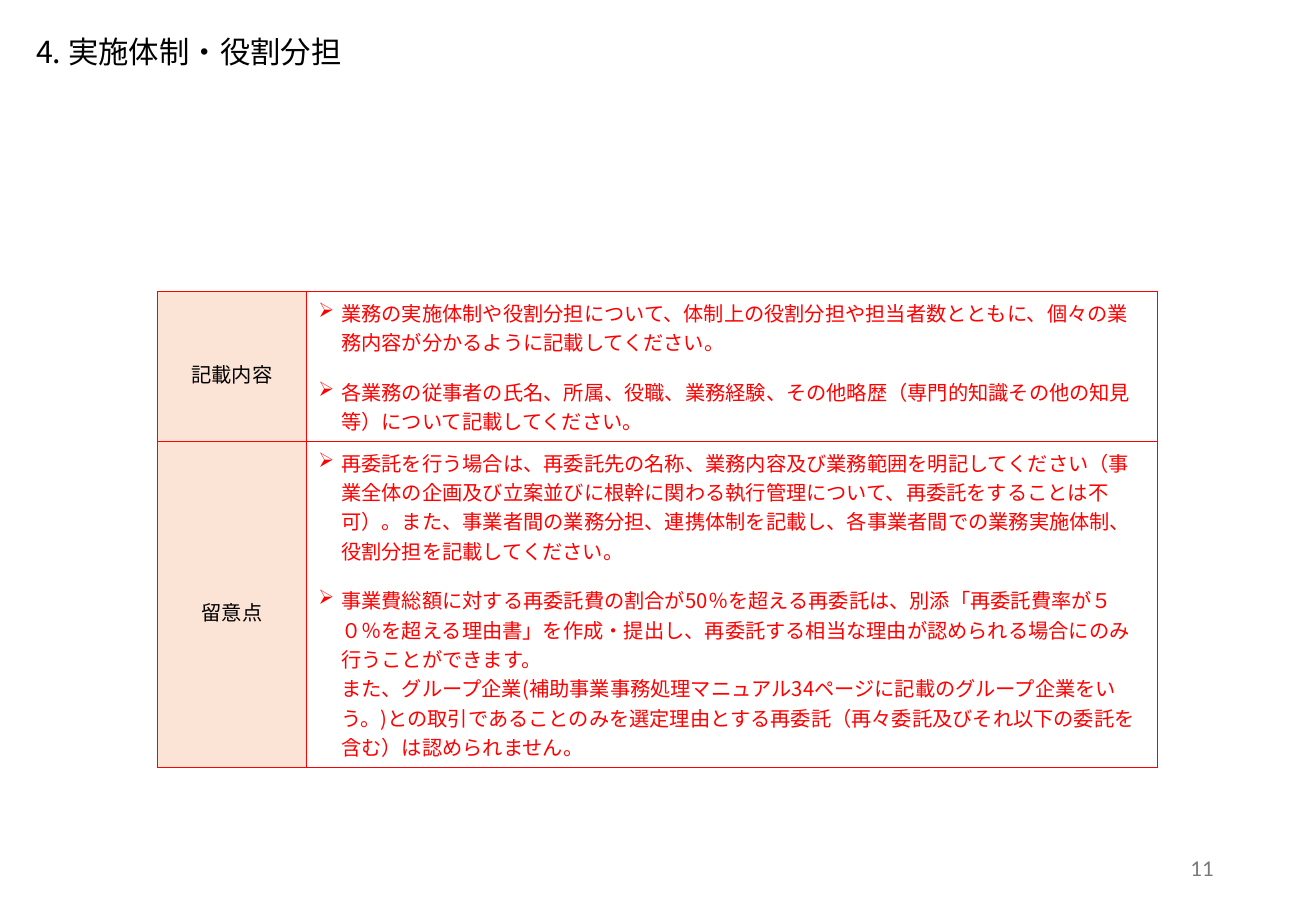
from dataclasses import dataclass

import pptx
import pptx.dml.color
import pptx.enum.lang
import pptx.enum.text
import pptx.oxml
import pptx.oxml.ns
import pptx.util
from pptx.util import Cm, Pt

ALIGN = pptx.enum.text.PP_ALIGN
ANCHOR = pptx.enum.text.MSO_ANCHOR


@dataclass(frozen=True)
class Theme:
    japanese: str = "Noto Sans CJK JP"
    latin: str = "Lato"
    black: str = "000000"
    red: str = "FF0000"
    grey: str = "797979"
    label_fill: str = "FBE3D6"
    white: str = "FFFFFF"
    title_size: int = 18
    body_size: int = 12
    border_width: float = 0.5


THEME = Theme()

GUIDANCE = [
    ("記載内容", [
        "業務の実施体制や役割分担について、体制上の役割分担や担当者数とともに、"
        "個々の業務内容が分かるように記載してください。",
        "各業務の従事者の氏名、所属、役職、業務経験、その他略歴"
        "（専門的知識その他の知見等）について記載してください。",
    ]),
    ("留意点", [
        "再委託を行う場合は、再委託先の名称、業務内容及び業務範囲を明記してください"
        "（事業全体の企画及び立案並びに根幹に関わる執行管理について、再委託をすることは不可）。"
        "また、事業者間の業務分担、連携体制を記載し、各事業者間での業務実施体制、"
        "役割分担を記載してください。",
        "事業費総額に対する再委託費の割合が50％を超える再委託は、"
        "別添「再委託費率が５０％を超える理由書」を作成・提出し、"
        "再委託する相当な理由が認められる場合にのみ行うことができます。\v"
        "また、グループ企業(補助事業事務処理マニュアル34ページに記載のグループ企業をいう。)"
        "との取引であることのみを選定理由とする再委託"
        "（再々委託及びそれ以下の委託を含む）は認められません。",
    ]),
]
COLUMN_WIDTHS = (Cm(3.1), Cm(17.8))
ROW_HEIGHTS = (Cm(3.1), Cm(6.82))


def xml(markup):
    namespace = pptx.oxml.ns.nsdecls("a")
    return pptx.oxml.parse_xml(markup.replace(" ", f" {namespace} ", 1))


def rgb(color):
    return pptx.dml.color.RGBColor.from_string(color)


def format_runs(paragraph, size, color, typeface):
    for run in paragraph.runs:
        run.font.size = Pt(size)
        run.font.bold = False
        run.font.color.rgb = rgb(color)
        run.font.name = typeface
        run.font.language_id = pptx.enum.lang.MSO_LANGUAGE_ID.JAPANESE
        latin = run.font._element.find(pptx.oxml.ns.qn("a:latin"))
        latin.addnext(xml(f'<a:ea typeface="{typeface}"/>'))


def add_title(slide, text):
    title = slide.shapes.title
    title.left, title.top, title.width, title.height = Cm(0.5), Cm(0.6), Cm(26.5), Cm(1)
    frame = title.text_frame
    frame.text = text
    frame.auto_size = pptx.enum.text.MSO_AUTO_SIZE.NONE
    frame.vertical_anchor = ANCHOR.BOTTOM
    heading = frame.paragraphs[0]
    heading.alignment = ALIGN.LEFT
    heading.line_spacing = 0.9
    format_runs(heading, THEME.title_size, THEME.black, THEME.japanese)


def style_cell(cell, fill):
    """Draw the four borders, then the fill, and centre the text vertically."""
    properties = cell._tc.get_or_add_tcPr()
    for side in "LRTB":
        properties.append(xml(
            f'<a:ln{side} w="{Pt(THEME.border_width)}"><a:solidFill>'
            f'<a:srgbClr val="{THEME.red}"/></a:solidFill></a:ln{side}>'))
    cell.fill.solid()
    cell.fill.fore_color.rgb = rgb(fill)
    cell.vertical_anchor = ANCHOR.MIDDLE


def fill_label(cell, text):
    style_cell(cell, THEME.label_fill)
    cell.text_frame.text = text
    label = cell.text_frame.paragraphs[0]
    label.alignment = ALIGN.CENTER
    label.line_spacing = 1.5
    format_runs(label, THEME.body_size, THEME.black, THEME.japanese)


def fill_bullets(cell, items):
    style_cell(cell, THEME.white)
    frame = cell.text_frame
    for index, text in enumerate(items):
        item = frame.add_paragraph() if index else frame.paragraphs[0]
        item.text = text
        properties = item._p.get_or_add_pPr()
        properties.set("marL", str(Cm(0.48)))
        properties.set("indent", str(-Cm(0.48)))
        properties.append(xml('<a:buChar char="➢"/>'))
        item.space_after = Pt(12)
        format_runs(item, THEME.body_size, THEME.red, THEME.japanese)


def add_guidance_table(slide):
    table = slide.shapes.add_table(
        len(GUIDANCE), len(COLUMN_WIDTHS), Cm(3.3), Cm(6.1),
        sum(COLUMN_WIDTHS), sum(ROW_HEIGHTS)).table
    table.first_row = table.horz_banding = False
    for column, width in zip(table.columns, COLUMN_WIDTHS):
        column.width = width
    for row, height, (label, items) in zip(table.rows, ROW_HEIGHTS, GUIDANCE):
        row.height = height
        fill_label(row.cells[0], label)
        fill_bullets(row.cells[1], items)


def add_page_number(slide, text):
    frame = slide.shapes.add_textbox(Cm(19.43), Cm(17.65), Cm(6.2), Cm(1.02)).text_frame
    frame.word_wrap = True
    frame.vertical_anchor = ANCHOR.MIDDLE
    frame.text = text
    number = frame.paragraphs[0]
    number.alignment = ALIGN.RIGHT
    format_runs(number, THEME.body_size, THEME.grey, THEME.latin)


def main():
    deck = pptx.Presentation()
    deck.slide_width, deck.slide_height = Cm(27.51), Cm(19.05)
    slide = deck.slides.add_slide(deck.slide_layouts.get_by_name("Title Only"))
    add_title(slide, "4. 実施体制・役割分担")
    add_guidance_table(slide)
    add_page_number(slide, "11")
    deck.save("out.pptx")


if __name__ == "__main__":
    main()
